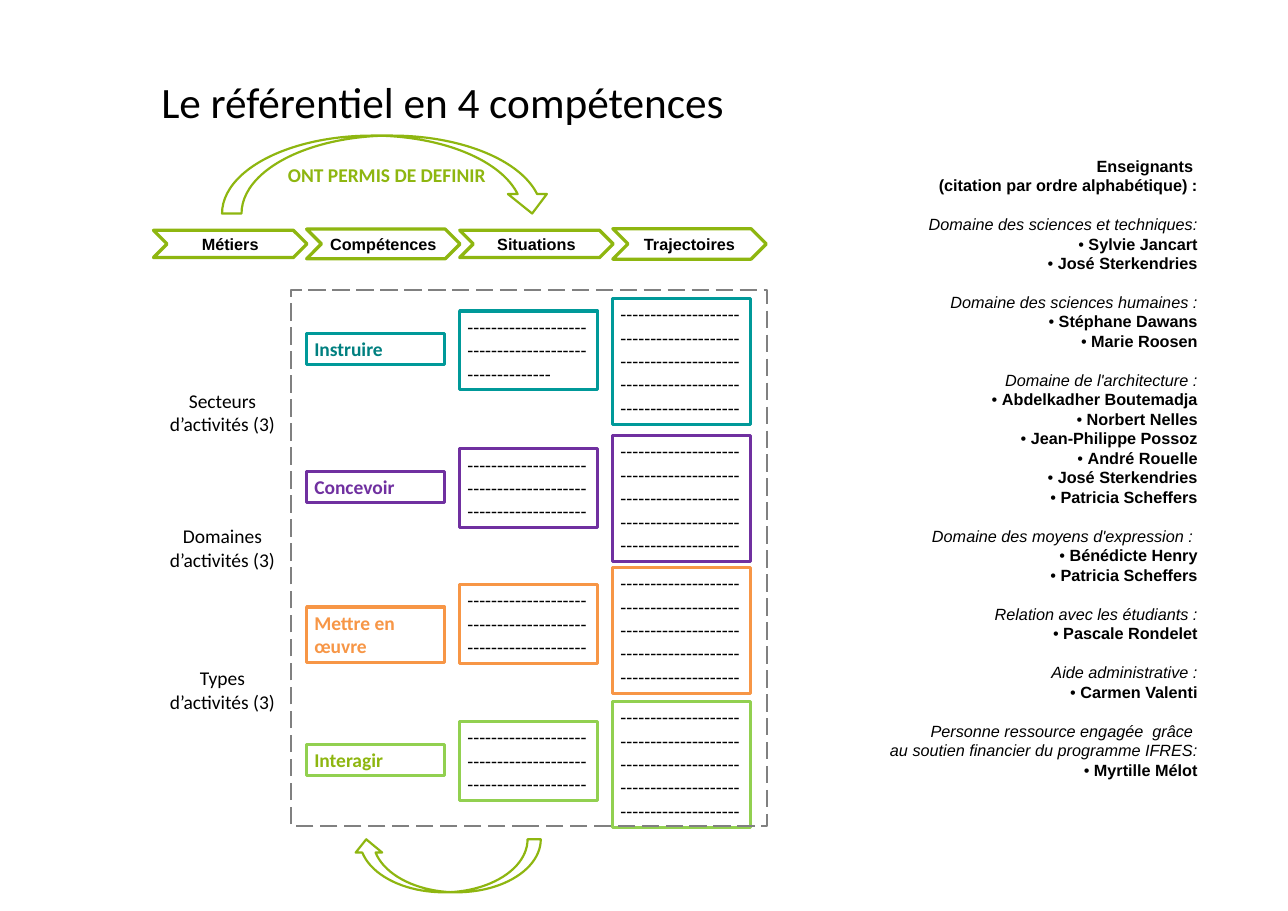
from pptx import Presentation
from pptx.dml.color import RGBColor
from pptx.enum.dml import MSO_LINE
from pptx.enum.shapes import MSO_SHAPE
from pptx.enum.text import MSO_ANCHOR, PP_ALIGN
from pptx.util import Inches, Pt

LEFT, CENTER, RIGHT = PP_ALIGN.LEFT, PP_ALIGN.CENTER, PP_ALIGN.RIGHT
TOP, MIDDLE = MSO_ANCHOR.TOP, MSO_ANCHOR.MIDDLE
RECT, CHEVRON, ARC = MSO_SHAPE.RECTANGLE, MSO_SHAPE.CHEVRON, MSO_SHAPE.CURVED_DOWN_ARROW

COLORS = {"black": "000000", "green": "8EB610", "teal": "009999", "deep_teal": "008080",
          "purple": "7030A0", "orange": "F79646", "lime": "92D050", "grey": "808080"}

TITLE = "Le référentiel en 4 compétences"
STEPS = [("Métiers", 0.35), ("Compétences", 0.38), ("Situations", 0.35), ("Trajectoires", 0.39)]
SKILLS = [
    ("Instruire", "teal", "deep_teal", 3.99, 3.83, 0.40, 54),
    ("Concevoir", "purple", "purple", 5.76, 5.59, 0.40, 60),
    ("Mettre en œuvre", "orange", "orange", 7.50, 7.28, 0.71, 60),
    ("Interagir", "lime", "green", 9.26, 9.00, 0.40, 60),
]
ACTIVITIES = [(["Secteurs d’activités (3)"], 4.94),
              (["Domaines d’activités (3)"], 6.68),
              (["Types", "d’activités (3)"], 8.50)]
TEACHERS_HEAD = ["Enseignants ", "(citation par ordre alphabétique) :"]
TEACHERS = [
    (["Domaine des sciences et techniques:"], ["Sylvie Jancart", "José Sterkendries"]),
    (["Domaine des sciences humaines :"], ["Stéphane Dawans", "Marie Roosen"]),
    (["Domaine de l'architecture :"],
     ["Abdelkadher Boutemadja", "Norbert Nelles", "Jean-Philippe Possoz",
      "André Rouelle", "José Sterkendries", "Patricia Scheffers"]),
    (["Domaine des moyens d'expression : "], ["Bénédicte Henry", "Patricia Scheffers"]),
    (["Relation avec les étudiants :"], ["Pascale Rondelet"]),
    (["Aide administrative :"], ["Carmen Valenti"]),
    (["Personne ressource engagée  grâce ", "au soutien financier du programme IFRES:"],
     ["Myrtille Mélot"]),
]

COL_X, COL_STEP, BOX_W = 1.97, 1.965, 1.77
STEP_MID, SKILL_DROP = 3.13, 0.29
TEACHER_LINE = 18


def column(i):
    return COL_X + i * COL_STEP


def rgb(name):
    return RGBColor.from_string(COLORS[name])


def add_run(p, text, size, color="black", font="Calibri", bold=False, italic=False):
    r = p.add_run()
    r.text = text
    r.font.size, r.font.name = Pt(size), font
    r.font.bold, r.font.italic = bold, italic
    r.font.color.rgb = rgb(color)


def fill_text(tf, lines, size, align=LEFT, anchor=TOP, **style):
    tf.word_wrap = True
    tf.vertical_anchor = anchor
    for i, line in enumerate(lines):
        p = tf.add_paragraph() if i else tf.paragraphs[0]
        p.alignment = align
        add_run(p, line, size, **style)


def add_outline(s, kind, x, y, w, h, color, width):
    sp = s.shapes.add_shape(kind, Inches(x), Inches(y), Inches(w), Inches(h))
    sp.shadow.inherit = False
    sp.fill.background()
    sp.line.color.rgb = rgb(color)
    sp.line.width = Pt(width)
    return sp


def add_textbox(s, x, y, w, h):
    return s.shapes.add_textbox(Inches(x), Inches(y), Inches(w), Inches(h)).text_frame


def add_teachers(s):
    tf = add_textbox(s, 11.05, 1.92, 4.45, 8.82)
    tf.margin_left = tf.margin_right = Inches(0.13)
    tf.margin_top = Inches(0.08)
    fill_text(tf, TEACHERS_HEAD, 15, RIGHT, font="Arial", bold=True)
    for heading, names in TEACHERS:
        for i, line in enumerate(heading):
            p = tf.add_paragraph()
            p.space_before = Pt(0 if i else TEACHER_LINE)
            add_run(p, line, 15, font="Arial", italic=True)
        for name in names:
            p = tf.add_paragraph()
            add_run(p, "• ", 15, font="Arial")
            add_run(p, name, 15, font="Arial", bold=True)
    for p in tf.paragraphs:
        p.alignment = RIGHT
        p.line_spacing = Pt(TEACHER_LINE)


def main():
    prs = Presentation()
    prs.slide_width, prs.slide_height = Inches(16.53), Inches(11.69)
    s = prs.slides.add_slide(prs.slide_layouts[5])

    title = s.shapes.title
    title.left, title.top = Inches(COL_X), Inches(0.39)
    title.width, title.height = Inches(14.56), Inches(1.82)
    fill_text(title.text_frame, [TITLE], 40, anchor=MIDDLE)

    add_teachers(s)

    top_arc = add_outline(s, ARC, 2.85, 1.74, 4.23, 1, "green", 2)
    fill_text(top_arc.text_frame, ["ONT PERMIS DE DEFINIR"], 18, CENTER, MIDDLE,
              color="green", bold=True)
    bottom_arc = add_outline(s, ARC, 4.53, 10.77, 2.41, 0.68, "green", 2)
    bottom_arc.rotation = 180

    for i, (label, h) in enumerate(STEPS):
        sp = add_outline(s, CHEVRON, column(i), STEP_MID - h / 2, 1.97, h, "green", 3)
        fill_text(sp.text_frame, [label], 15, CENTER, MIDDLE, font="Arial", bold=True)

    for lines, y in ACTIVITIES:
        fill_text(add_textbox(s, COL_X, y, BOX_W, 0.71), lines, 18, CENTER)

    for name, line, ink, situation_y, path_y, name_h, dashes in SKILLS:
        boxes = [(name, situation_y + SKILL_DROP, name_h, ink, True),
                 ("-" * dashes, situation_y, 1.01, "black", False),
                 ("-" * 100, path_y, 1.62, "black", False)]
        for i, (text, y, h, color, bold) in enumerate(boxes, 1):
            sp = add_outline(s, RECT, column(i), y, BOX_W, h, line, 3)
            fill_text(sp.text_frame, [text], 18, color=color, bold=bold)

    frame = add_outline(s, RECT, 3.74, 3.72, 6.1, 6.88, "grey", 2)
    frame.line.dash_style = MSO_LINE.LONG_DASH

    prs.save("out.pptx")


if __name__ == "__main__":
    main()
